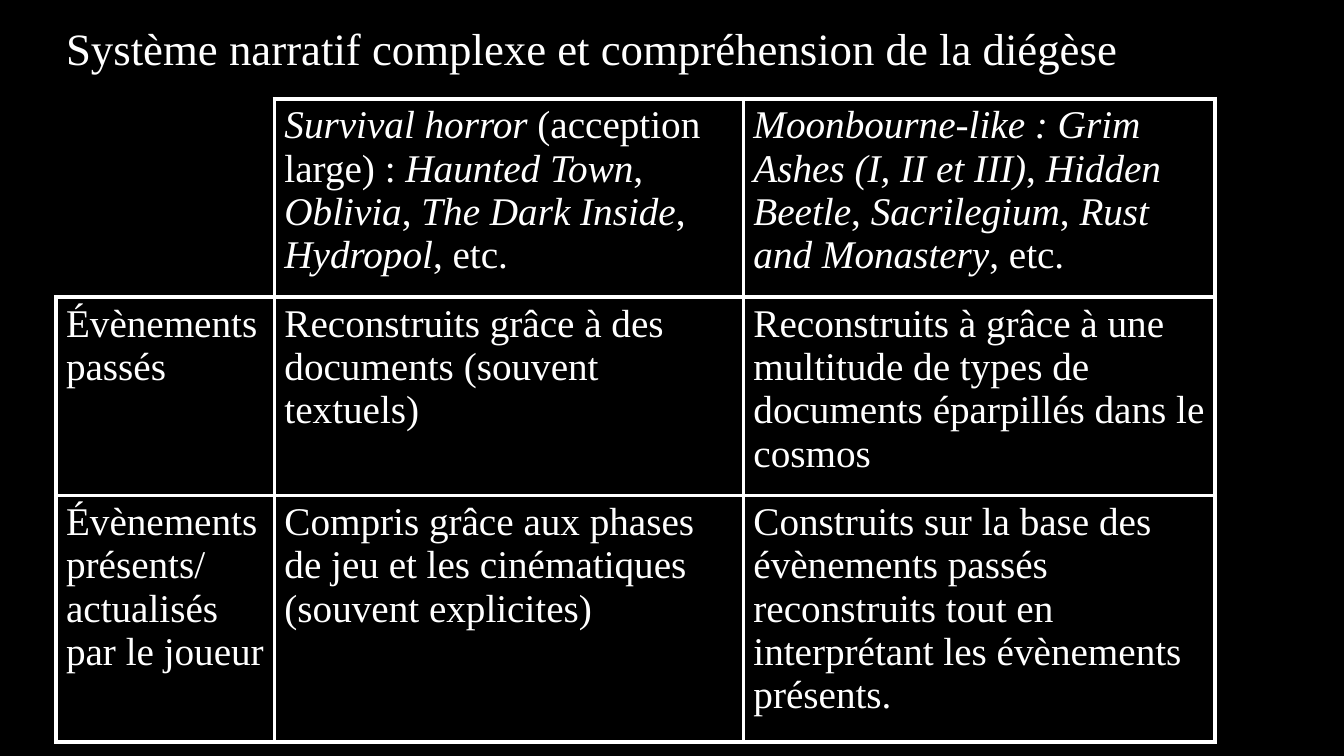
from lxml import etree
from pptx import Presentation
from pptx.dml.color import RGBColor
from pptx.enum.text import MSO_ANCHOR, MSO_AUTO_SIZE, PP_ALIGN
from pptx.oxml.ns import qn
from pptx.util import Pt

TOP = MSO_ANCHOR.TOP
GROW = MSO_AUTO_SIZE.SHAPE_TO_FIT_TEXT
JUSTIFY = PP_ALIGN.JUSTIFY

COLORS = {"back": "000000", "ink": "FFFFFF"}
FONT = "Times New Roman"
TITLE_SIZE, CELL_SIZE = 32, 28
BORDER = 3
COLUMNS = (156, 335, 337)
ROWS = (141.5, 141.5, 176)

TITLE = "Système narratif complexe et compréhension de la diégèse"
# Asterisks enclose italics; a newline is a line break
CELLS = (
    ("",
     "*Survival horror *(acception large) : *Haunted Town*, *Oblivia*, "
     "*The Dark Inside*, *Hydropol*, etc.",
     "*Moonbourne*-*like : Grim Ashes (I, II et III)*, *Hidden Beetle*, "
     "*Sacrilegium*, *Rust and Monastery*, etc."),
    ("Évènements passés",
     "Reconstruits grâce à des documents (souvent textuels)",
     "Reconstruits à grâce à une multitude de types de documents éparpillés "
     "dans le cosmos"),
    ("Évènements présents/\nactualisés par le joueur",
     "Compris grâce aux phases de jeu et les cinématiques (souvent explicites)",
     "Construits sur la base des évènements passés reconstruits tout en "
     "interprétant les évènements présents."),
)


def color(name):
    return RGBColor.from_string(COLORS[name])


def add_run(p, text, size, italic=False):
    r = p.add_run()
    r.text = text
    for key, value in {"name": FONT, "size": Pt(size), "bold": False,
                       "italic": italic}.items():
        setattr(r.font, key, value)
    r.font.color.rgb = color("ink")


def write_cell(p, text):
    for i, part in enumerate(text.split("*")):
        for j, line in enumerate(part.split("\n")):
            if j:
                p.add_line_break()
            if line:
                add_run(p, line, CELL_SIZE, italic=i % 2 == 1)


def set_borders(cell, hidden):
    tcPr = cell._tc.get_or_add_tcPr()
    for side in "LRTB":
        ln = etree.SubElement(tcPr, qn(f"a:ln{side}"), w=str(Pt(BORDER)))
        if side in hidden:
            etree.SubElement(ln, qn("a:noFill"))
        else:
            fill = etree.SubElement(ln, qn("a:solidFill"))
            etree.SubElement(fill, qn("a:srgbClr"), val=COLORS["ink"])


def add_title(s, x, y, w, h):
    sp = s.shapes.title
    sp.left, sp.top, sp.width, sp.height = Pt(x), Pt(y), Pt(w), Pt(h)
    tf = sp.text_frame
    for key, value in {"word_wrap": True, "auto_size": GROW,
                       "vertical_anchor": TOP}.items():
        setattr(tf, key, value)
    p = tf.paragraphs[0]
    p.alignment = JUSTIFY
    add_run(p, TITLE, TITLE_SIZE)


def add_comparison(s, x, y):
    table = s.shapes.add_table(len(ROWS), len(COLUMNS), Pt(x), Pt(y),
                               Pt(sum(COLUMNS)), Pt(sum(ROWS))).table
    table.first_row = table.horz_banding = False
    for column, width in zip(table.columns, COLUMNS):
        column.width = Pt(width)
    for row, height, texts in zip(table.rows, ROWS, CELLS):
        row.height = Pt(height)
        for cell, text in zip(row.cells, texts):
            # The empty corner cell is open at the left and top
            set_borders(cell, hidden="" if text else "LT")
            cell.fill.solid()
            cell.fill.fore_color.rgb = color("back")
            write_cell(cell.text_frame.paragraphs[0], text)


def main():
    prs = Presentation()
    prs.slide_width, prs.slide_height = Pt(960), Pt(540)
    s = prs.slides.add_slide(prs.slide_layouts[5])
    # Background
    s.background.fill.solid()
    s.background.fill.fore_color.rgb = color("back")
    # Heading and table
    add_title(s, 40, 11.5, 857, 46)
    add_comparison(s, 40, 70.5)
    prs.save("out.pptx")


if __name__ == "__main__":
    main()
